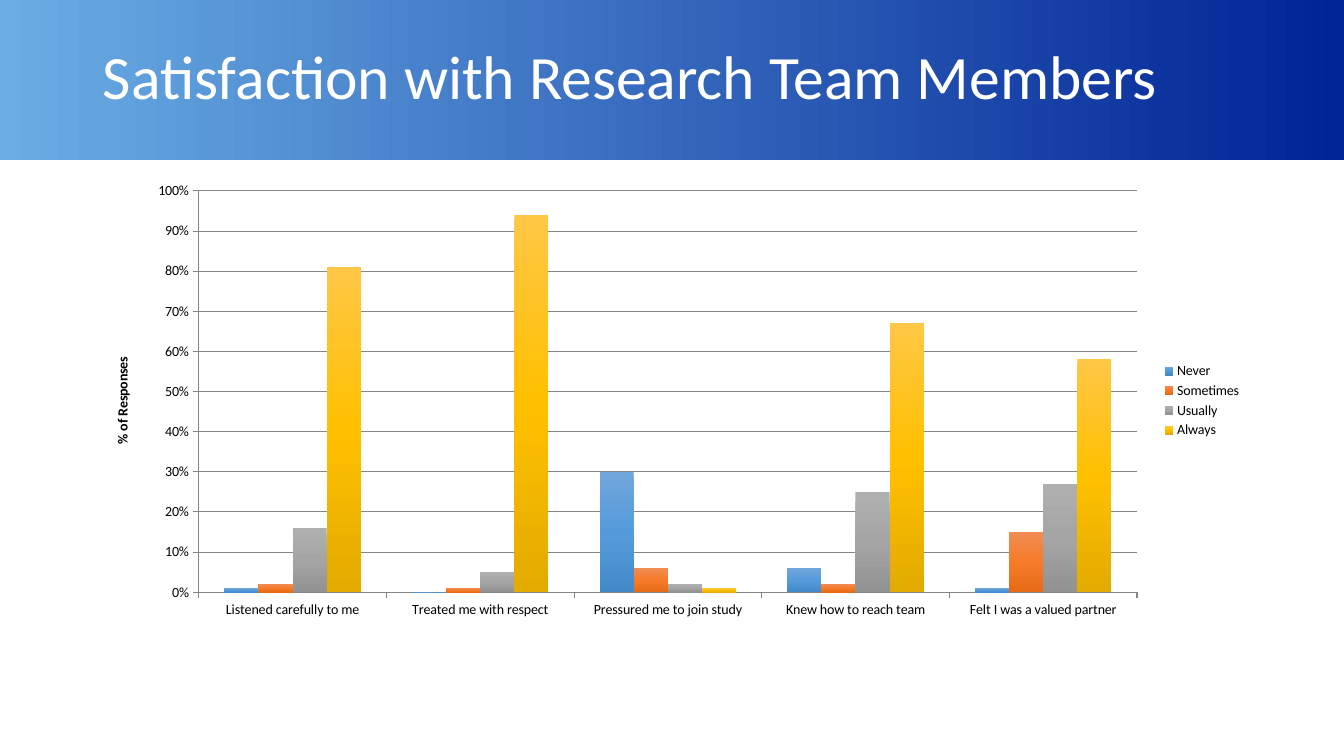
from copy import deepcopy

from pptx import Presentation
from pptx.chart.data import CategoryChartData
from pptx.dml.color import RGBColor
from pptx.enum.chart import XL_CHART_TYPE, XL_LEGEND_POSITION, XL_TICK_MARK
from pptx.enum.shapes import MSO_SHAPE
from pptx.enum.text import MSO_ANCHOR
from pptx.util import Pt

SCALE = 914400 / 100.8
WIDE, HIGH = 1344, 756


def px(*sizes):
    return [round(size * SCALE) for size in sizes]


def tint(code):
    return RGBColor.from_string(code)


def assign(target, values):
    for name, value in values.items():
        setattr(target, name, value)


class Deck:
    font = "Calibri"
    rule = "868686"

    def __init__(self):
        self.prs = Presentation()
        self.prs.slide_width, self.prs.slide_height = px(WIDE, HIGH)
        self.slide = self.prs.slides.add_slide(self.prs.slide_layouts[6])

    def style(self, font, size, color, bold=False):
        assign(font, {"name": self.font, "size": Pt(size), "bold": bold})
        font.color.rgb = tint(color)

    def blend(self, fill, owner, colors, angle):
        """Spread the colours evenly along a linear gradient."""
        fill.gradient()
        fill.gradient_angle = angle
        stops = owner.xpath(".//a:gsLst")[0]
        for _ in colors[2:]:
            stops.append(deepcopy(stops[0]))
        for i, (stop, color) in enumerate(zip(fill.gradient_stops, colors)):
            stop.position = i / (len(colors) - 1)
            stop.color.rgb = tint(color)

    def band(self, box, colors):
        shape = self.slide.shapes.add_shape(MSO_SHAPE.RECTANGLE, *px(*box))
        shape.shadow.inherit = False
        shape.line.fill.background()
        self.blend(shape.fill, shape._element, colors, 0)

    def text(self, box, words, size, color):
        frame = self.slide.shapes.add_textbox(*px(*box)).text_frame
        assign(frame, {"word_wrap": True, "vertical_anchor": MSO_ANCHOR.MIDDLE})
        para = frame.paragraphs[0]
        assign(para, {"text": words, "line_spacing": 0.9})
        self.style(para.font, size, color)

    def columns(self, box, groups, rows, label):
        data = CategoryChartData(number_format="0%")
        data.categories = groups
        for name, values, _ in rows:
            data.add_series(name, values)
        chart = self.slide.shapes.add_chart(
            XL_CHART_TYPE.COLUMN_CLUSTERED, *px(*box), data).chart
        assign(chart, {"has_title": False, "has_legend": True})
        self.style(chart.font, 10, "000000")
        assign(chart.legend, {"position": XL_LEGEND_POSITION.RIGHT,
                              "include_in_layout": False})

        # Columns
        plot = chart.plots[0]
        assign(plot, {"gap_width": 150, "overlap": 0, "vary_by_categories": False})
        for series, (_, _, colors) in zip(plot.series, rows):
            series.invert_if_negative = False
            self.blend(series.format.fill, series._element, colors, 270)

        # Axes
        axis = chart.value_axis
        assign(axis, {"minimum_scale": 0, "maximum_scale": 1, "major_unit": 0.1,
                      "has_major_gridlines": True})
        assign(axis.tick_labels, {"number_format": "0%",
                                  "number_format_is_linked": False})
        para = axis.axis_title.text_frame.paragraphs[0]
        para.text = label
        self.style(para.font, 10, "000000", True)
        for side in (axis, chart.category_axis):
            side.major_tick_mark = XL_TICK_MARK.OUTSIDE
        for part in (axis, chart.category_axis, axis.major_gridlines):
            part.format.line.width = Pt(0.75)
            part.format.line.color.rgb = tint(self.rule)


def main():
    deck = Deck()

    # Header
    deck.band((0, 0, WIDE, 160), ("6AADE4", "002395"))
    deck.text((93, 7, 1159, 146), "Satisfaction with Research Team Members",
              44, "FFFFFF")

    # Survey answers: name, shares, colours from top to bottom
    groups = ("Listened carefully to me", "Treated me with respect",
              "Pressured me to join study", "Knew how to reach team",
              "Felt I was a valued partner")
    rows = (
        ("Never", (0.01, 0, 0.3, 0.06, 0.01), ("71A6DB", "559BDB", "438AC9")),
        ("Sometimes", (0.02, 0.01, 0.06, 0.02, 0.15), ("F18C55", "F67B28", "E56B17")),
        ("Usually", (0.16, 0.05, 0.02, 0.25, 0.27), ("AFAFAF", "A5A5A5", "929292")),
        ("Always", (0.81, 0.94, 0.01, 0.67, 0.58), ("FFC746", "FFC000", "E3AB00")),
    )
    deck.columns((93, 174, 1159, 453), groups, rows, "% of Responses")

    deck.prs.save("out.pptx")


if __name__ == "__main__":
    main()
